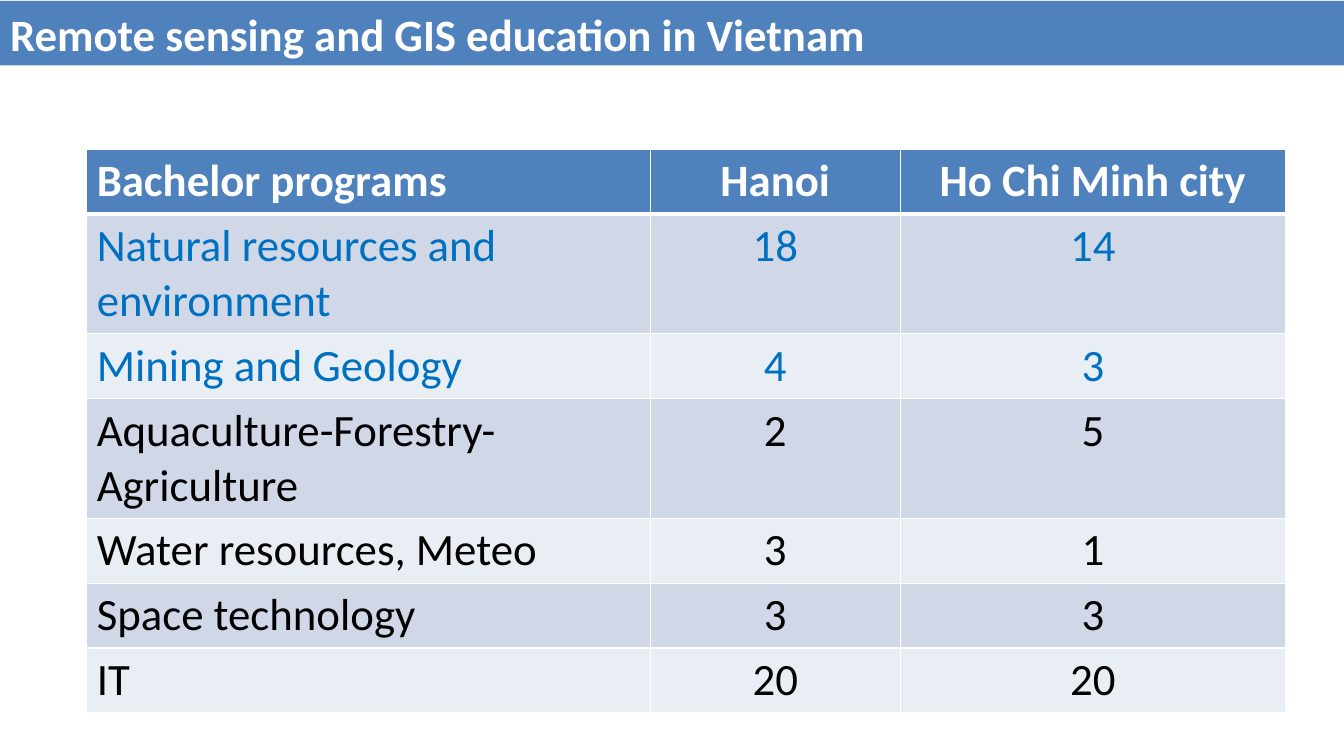
from lxml.etree import SubElement
from pptx import Presentation
from pptx.dml.color import RGBColor
from pptx.enum.text import MSO_ANCHOR, MSO_AUTO_SIZE, PP_ALIGN
from pptx.oxml.ns import qn
from pptx.util import Inches, Pt

BLUE = RGBColor(0x4F, 0x81, 0xBD)
BAND_DARK = RGBColor(0xD0, 0xD8, 0xE8)
BAND_LIGHT = RGBColor(0xE9, 0xED, 0xF4)
HIGHLIGHT = RGBColor(0x00, 0x70, 0xC0)
WHITE = RGBColor(0xFF, 0xFF, 0xFF)
BLACK = RGBColor(0x00, 0x00, 0x00)

COL_WIDTHS = [5.59, 2.48, 3.82]
ROW_HEIGHT = 0.41  # rows grow to fit their text
ROWS = [
    ("Bachelor programs", "Hanoi", "Ho Chi Minh city"),
    ("Natural resources and environment", "18", "14"),
    ("Mining and Geology", "4", "3"),
    ("Aquaculture-Forestry-Agriculture", "2", "5"),
    ("Water resources, Meteo", "3", "1"),
    ("Space technology", "3", "3"),
    ("IT", "20", "20"),
]
HIGHLIGHTED_ROWS = (1, 2)


def add_text(p, text, color, bold):
    r = p.add_run()
    r.text = text
    r.font.name = "Calibri"
    r.font.size = Pt(32)
    r.font.bold = bold
    r.font.color.rgb = color


def add_borders(cell, bottom, top):
    tcPr = cell._tc.get_or_add_tcPr()
    for side, width in (("lnL", 1), ("lnR", 1), ("lnT", top), ("lnB", bottom)):
        ln = SubElement(tcPr, qn(f"a:{side}"), w=str(Pt(width)))
        fill = SubElement(ln, qn("a:solidFill"))
        SubElement(fill, qn("a:srgbClr"), val=str(WHITE))


prs = Presentation()
prs.slide_width = Inches(13.33)
prs.slide_height = Inches(7.5)
s = prs.slides.add_slide(prs.slide_layouts[5])

# Title bar
title = s.shapes.title
title.left, title.top = Inches(0), Inches(0.01)
title.width, title.height = Inches(13.33), Inches(0.64)
title.fill.solid()
title.fill.fore_color.rgb = BLUE
tf = title.text_frame
tf.word_wrap = True
tf.auto_size = MSO_AUTO_SIZE.NONE
tf.vertical_anchor = MSO_ANCHOR.MIDDLE
p = tf.paragraphs[0]
p.alignment = PP_ALIGN.LEFT
add_text(p, "Remote sensing and GIS education in Vietnam", WHITE, True)

# Program table
table = s.shapes.add_table(
    len(ROWS), len(COL_WIDTHS), Inches(0.86), Inches(1.48),
    Inches(sum(COL_WIDTHS)), Inches(ROW_HEIGHT * len(ROWS))).table
for column, width in zip(table.columns, COL_WIDTHS):
    column.width = Inches(width)

for i, values in enumerate(ROWS):
    table.rows[i].height = Inches(ROW_HEIGHT)
    header = i == 0
    if header:
        fill, color = BLUE, WHITE
    else:
        fill = BAND_DARK if i % 2 else BAND_LIGHT
        color = HIGHLIGHT if i in HIGHLIGHTED_ROWS else BLACK
    for j, value in enumerate(values):
        cell = table.cell(i, j)
        add_borders(cell, bottom=3 if header else 1, top=3 if i == 1 else 1)
        cell.fill.solid()
        cell.fill.fore_color.rgb = fill
        p = cell.text_frame.paragraphs[0]
        p.alignment = PP_ALIGN.CENTER if j else PP_ALIGN.LEFT
        add_text(p, value, color, header)

prs.save("out.pptx")
